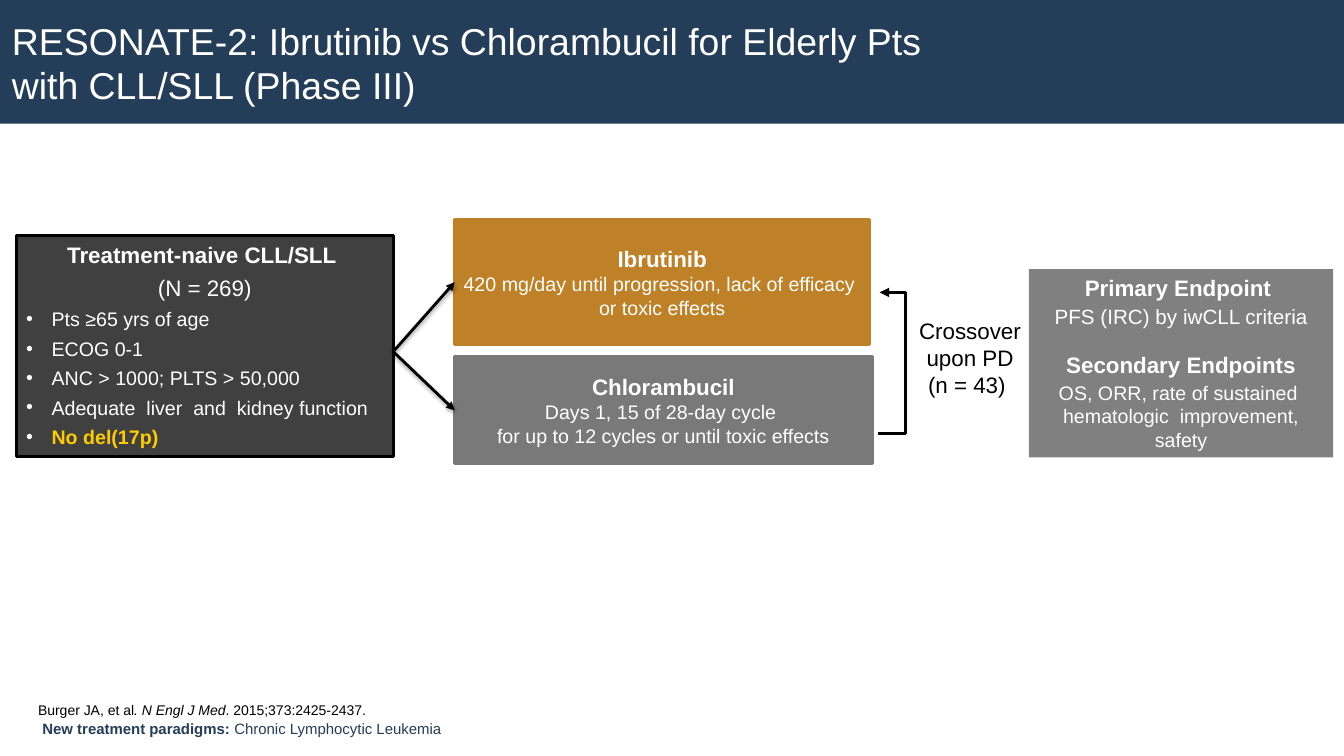
from lxml.etree import SubElement
from pptx import Presentation
from pptx.dml.color import RGBColor
from pptx.enum.shapes import MSO_CONNECTOR, MSO_SHAPE
from pptx.enum.text import MSO_ANCHOR, MSO_AUTO_SIZE, PP_ALIGN
from pptx.oxml.ns import qn
from pptx.util import Cm, Pt

NAVY, WHITE, BLACK = "243D58", "FFFFFF", "000000"
IBRUTINIB, CHLORAMBUCIL = "BF8127", "797979"
COHORT, ENDPOINTS, HIGHLIGHT = "404040", "808080", "FFCC00"


def color(hex_string):
    return RGBColor.from_string(hex_string)


def add_run(paragraph, text, size, ink=WHITE, bold=False, italic=False):
    """Add text to a paragraph; a newline becomes a line break."""
    for index, line in enumerate(text.split("\n")):
        if index:
            paragraph.add_line_break()
        run = paragraph.add_run()
        run.text = line
        font = run.font
        font.name, font.size = "Arial", Pt(size)
        font.bold, font.italic = bold, italic
        font.color.rgb = color(ink)


def set_frame(frame, anchor=MSO_ANCHOR.TOP, wrap=True, insets=(0.25, 0.13, 0.25, 0.13)):
    frame.auto_size = MSO_AUTO_SIZE.NONE
    frame.word_wrap = wrap
    frame.vertical_anchor = anchor
    (frame.margin_left, frame.margin_top,
     frame.margin_right, frame.margin_bottom) = map(Cm, insets)


def add_paragraph(frame, runs, align=PP_ALIGN.CENTER, before=0, after=0, bullet=False):
    """Fill the first paragraph if it is empty, else append a new one."""
    first = frame.paragraphs[0]
    paragraph = frame.add_paragraph() if first.runs else first
    if bullet:
        properties = paragraph._p.get_or_add_pPr()
        properties.set("marL", str(Cm(0.64)))
        properties.set("indent", str(-Cm(0.64)))
        bullet_color = SubElement(properties, qn("a:buClr"))
        SubElement(bullet_color, qn("a:srgbClr"), val=WHITE)
        SubElement(properties, qn("a:buFont"), typeface="Arial")
        SubElement(properties, qn("a:buChar"), char="•")
    paragraph.alignment = align
    paragraph.space_before, paragraph.space_after = Pt(before), Pt(after)
    for run in runs:
        add_run(paragraph, *run)


def add_panel(slide, box, fill, outline=None, **frame_options):
    panel = slide.shapes.add_shape(MSO_SHAPE.RECTANGLE, *map(Cm, box))
    panel.shadow.inherit = False
    panel.fill.solid()
    panel.fill.fore_color.rgb = color(fill)
    if outline:
        panel.line.color.rgb = color(outline)
        panel.line.width = Pt(2)
    else:
        panel.line.fill.background()
    set_frame(panel.text_frame, **frame_options)
    return panel


def add_label(slide, box, runs, align=PP_ALIGN.LEFT, **frame_options):
    label = slide.shapes.add_textbox(*map(Cm, box))
    set_frame(label.text_frame, **frame_options)
    add_paragraph(label.text_frame, runs, align)


def add_arrow(slide, start, end, width, kind=MSO_CONNECTOR.STRAIGHT, shadow=False):
    arrow = slide.shapes.add_connector(kind, *map(Cm, start + end))
    arrow.line.color.rgb = color(BLACK)
    arrow.line.width = Pt(width)
    SubElement(arrow.line._get_or_add_ln(), qn("a:tailEnd"), type="triangle")
    effects = SubElement(arrow._element.spPr, qn("a:effectLst"))
    if shadow:
        outer = SubElement(effects, qn("a:outerShdw"), blurRad=str(Pt(3.1)),
                           dist=str(Pt(1.6)), dir="5400000", rotWithShape="0")
        shade = SubElement(outer, qn("a:srgbClr"), val=BLACK)
        SubElement(shade, qn("a:alpha"), val="38000")
    return arrow


def add_treatment(slide, box, fill, name, regimen):
    panel = add_panel(slide, box, fill, fill, anchor=MSO_ANCHOR.MIDDLE, wrap=False)
    add_paragraph(panel.text_frame, [(name, 16, WHITE, True)])
    for line in regimen:
        add_paragraph(panel.text_frame, [(line, 14)])


def add_cohort(slide):
    frame = add_panel(slide, (0.41, 5.94, 9.5, 5.56), COHORT, BLACK).text_frame
    add_paragraph(frame, [("Treatment-naive CLL/SLL ", 16, WHITE, True)], after=4.5)
    add_paragraph(frame, [("(N = 269)", 16)], after=4.5)
    criteria = ["Pts ≥65 yrs of age", "ECOG 0-1", "ANC > 1000; PLTS > 50,000",
                "Adequate  liver  and  kidney function"]
    runs = [(text, 14) for text in criteria] + [("No del(17p)", 14, HIGHLIGHT, True)]
    for run in runs:
        add_paragraph(frame, [run], PP_ALIGN.LEFT, after=4.2, bullet=True)


def add_endpoints(slide):
    frame = add_panel(slide, (25.93, 6.78, 7.67, 4.75), ENDPOINTS).text_frame
    endpoints = [
        ("Primary Endpoint ", "PFS (IRC) by iwCLL criteria", 14.7),
        ("Secondary Endpoints",
         "OS, ORR, rate of sustained  hematologic  improvement, safety", 14),
    ]
    for index, (heading, measures, size) in enumerate(endpoints):
        add_paragraph(frame, [(heading, 16, WHITE, True)], before=16 if index else 0)
        add_paragraph(frame, [(measures, size)], before=2)


def add_title(slide):
    title = slide.shapes.title
    title.left, title.top, title.width, title.height = map(Cm, (0.3, 0, 23.77, 3.15))
    set_frame(title.text_frame, MSO_ANCHOR.MIDDLE, insets=(0, 0.13, 0.3, 0.13))
    add_paragraph(title.text_frame, [
        ("RESONATE-2: Ibrutinib vs Chlorambucil for Elderly Pts with CLL/SLL (Phase III)",
         26.7)], PP_ALIGN.LEFT)
    # Band behind the title
    band = add_panel(slide, (0, 0, 33.87, 3.12), NAVY)
    slide.shapes._spTree.insert(2, band._element)


def main():
    presentation = Presentation()
    presentation.slide_width, presentation.slide_height = Cm(33.87), Cm(19.05)
    slide = presentation.slides.add_slide(presentation.slide_layouts[5])
    add_title(slide)

    # Footer and citation
    add_label(slide, (1.07, 17.65, 13.31, 1.4),
              [("New treatment paradigms: ", 10.7, NAVY, True),
               ("Chronic Lymphocytic Leukemia", 10.7, NAVY)],
              anchor=MSO_ANCHOR.MIDDLE, insets=(0, 0.18, 0.41, 0.18))
    add_label(slide, (0.71, 17.55, 23.77, 0.69),
              [("Burger JA, et al", 10, BLACK),
               (". N Engl J Med", 10, BLACK, False, True),
               (". 2015;373:2425-2437.", 10, BLACK)],
              anchor=MSO_ANCHOR.BOTTOM)

    # Study arms
    add_treatment(slide, (11.46, 5.54, 10.46, 3.15), IBRUTINIB, "Ibrutinib",
                  ["420 mg/day until progression, lack of efficacy ", "or toxic effects"])
    add_treatment(slide, (11.46, 8.99, 10.52, 2.69), CHLORAMBUCIL, "Chlorambucil",
                  ["Days 1, 15 of 28-day cycle ",
                   "for up to 12 cycles or until toxic effects"])
    add_cohort(slide)

    # Crossover: the elbow runs out to the right of both ends
    add_label(slide, (22.78, 7.87, 3.33, 2.31),
              [("Crossover\nupon PD\n(n = 43) ", 16, BLACK)], PP_ALIGN.CENTER)
    crossover = add_arrow(slide, (22.12, 10.92), (22.17, 7.37), 2.25, MSO_CONNECTOR.ELBOW)
    bends = crossover._element.spPr.find(qn("a:prstGeom")).find(qn("a:avLst"))
    SubElement(bends, qn("a:gd"), name="adj1", fmla="val 1400000")

    # Randomization
    for arm_y in (7.11, 10.34):
        add_arrow(slide, (9.91, 8.86), (11.46, arm_y), 2, shadow=True)

    add_endpoints(slide)
    presentation.save("out.pptx")


if __name__ == "__main__":
    main()
